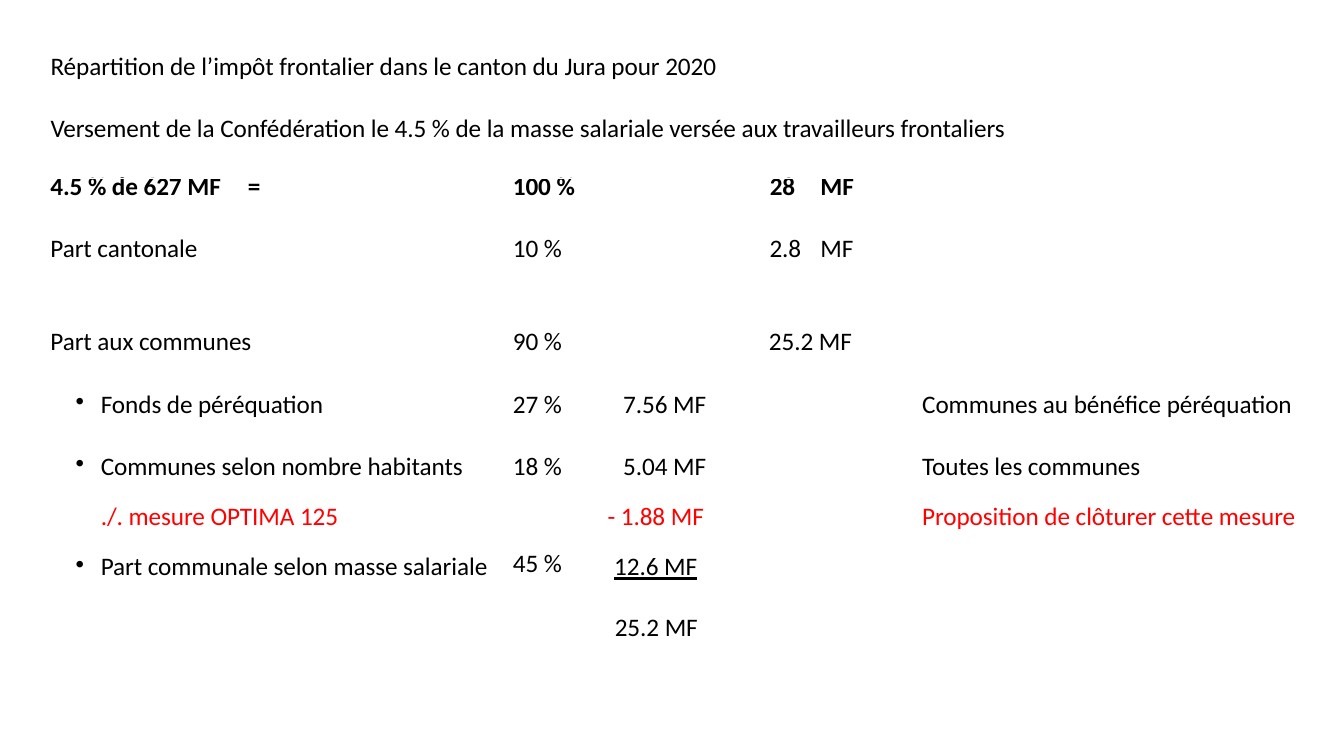
from lxml.etree import SubElement
from pptx import Presentation
from pptx.dml.color import RGBColor
from pptx.enum.text import PP_ALIGN as Align
from pptx.oxml.ns import qn
from pptx.util import Pt

COLORS = {"text": "000000", "measure": "FF0000"}
BULLET_INDENT = 38.2


def style(paragraph, color="text", bold=False, underline=False):
    for run in paragraph.runs:
        font = run.font
        font.name, font.size = "Calibri", Pt(18)
        font.bold, font.underline = bold, underline
        font.color.rgb = RGBColor.from_string(COLORS[color])
        run._r.get_or_add_rPr().set("spc", "-5")


def indent(paragraph, left, bullet=False):
    properties = paragraph._p.get_or_add_pPr()
    properties.set("marL", str(Pt(left)))
    properties.set("indent", str(Pt(-18 if bullet else 0)))
    if bullet:
        SubElement(properties, qn("a:buChar")).set("char", "•")


presentation = Presentation()
presentation.slide_width, presentation.slide_height = Pt(960), Pt(540)
slide = presentation.slides.add_slide(presentation.slide_layouts[6])

# Heading
heading = slide.shapes.add_textbox(Pt(35.3), Pt(34.6), Pt(694), Pt(67.7))
frame = heading.text_frame
frame.word_wrap = True
frame.margin_left = frame.margin_right = frame.margin_bottom = 0
frame.margin_top = Pt(1)
frame.text = (
    "Répartition de l’impôt frontalier dans le canton du Jura pour 2020\n"
    "Versement de la Confédération le 4.5 % de la masse salariale versée aux travailleurs frontaliers"
)
for paragraph, before in zip(frame.paragraphs, (1, 23)):
    paragraph.space_before = Pt(before)
    indent(paragraph, 0.8)
    style(paragraph)

# Table grid
column_widths = [135.4, 192.2, 60.5, 105.1, 52.6, 33.8, 321.8]
row_heights = [31, 55.4, 53.3, 44.6, 42.5, 75.6, 31]
table = slide.shapes.add_table(
    len(row_heights), len(column_widths), Pt(33.8), Pt(127.4),
    Pt(sum(column_widths)), Pt(sum(row_heights))).table
table.first_row = table.horz_banding = False
for column, width in zip(table.columns, column_widths):
    column.width = Pt(width)
for row, height in zip(table.rows, row_heights):
    row.height = Pt(height)
for cell in table.iter_cells():
    cell.fill.background()
    cell.margin_left = cell.margin_right = cell.margin_top = cell.margin_bottom = 0
for row in range(len(row_heights)):
    for first in ((3, 5) if row < 2 else (0, 4)):
        table.cell(row, first).merge(table.cell(row, first + 1))

# Cell texts by row and column; a tuple holds several paragraphs
contents = [
    {0: "4.5 % de 627 MF", 1: "=", 2: "100 %", 3: "28", 5: "MF"},
    {0: "Part cantonale", 2: "10 %", 3: "2.8", 5: "MF"},
    {0: "Part aux communes", 2: "90 %", 4: "25.2 MF"},
    {0: "Fonds de péréquation", 2: "27 %", 3: "7.56 MF",
     6: "Communes au bénéfice péréquation"},
    {0: "Communes selon nombre habitants", 2: "18 %", 3: "5.04 MF",
     6: "Toutes les communes"},
    {0: ("./. mesure OPTIMA 125", "Part communale selon masse salariale"),
     2: "45 %", 3: ("- 1.88 MF", "12.6 MF"),
     6: "Proposition de clôturer cette mesure"},
    {3: "25.2 MF"},
]
top_margins = [0, 8.7, 19.5, 10.9, 10.9, 4.3, 8.6]
left_indents = [2.2, 7.9, 5, 0, 22.3, 6.5, 45.4]
amount_layout = {  # row: alignment, right margin of the amount column
    0: (Align.RIGHT, 11.5), 1: (Align.RIGHT, 7.2),
    3: (Align.RIGHT, 22.5), 4: (Align.RIGHT, 22.5),
    5: (Align.CENTER, 12), 6: (Align.LEFT, 0),
}
exact_lines = {0: 17.1, 6: 21.5}

for row, texts in enumerate(contents):
    for column, text in texts.items():
        cell = table.cell(row, column)
        lines = text if isinstance(text, tuple) else (text,)
        cell.margin_top = Pt(38 if text == "45 %" else top_margins[row])
        cell.text_frame.text = "\n".join(lines)
        for number, paragraph in enumerate(cell.text_frame.paragraphs):
            paragraph.space_before = Pt(13.9 * number)
            if row in exact_lines:
                paragraph.line_spacing = Pt(exact_lines[row])
            is_measure = row == 5 and number == 0 and column != 2
            if column == 0 and row >= 3:
                indent(paragraph, BULLET_INDENT, bullet=not is_measure)
            elif column == 3:
                paragraph.alignment, right = amount_layout[row]
                cell.margin_right = Pt(right)
                indent(paragraph, 17.3 if row == 6 else 0)
            else:
                indent(paragraph, left_indents[column])
            style(paragraph, "measure" if is_measure else "text",
                  bold=row == 0, underline=lines[number] == "12.6 MF")

presentation.save("out.pptx")
